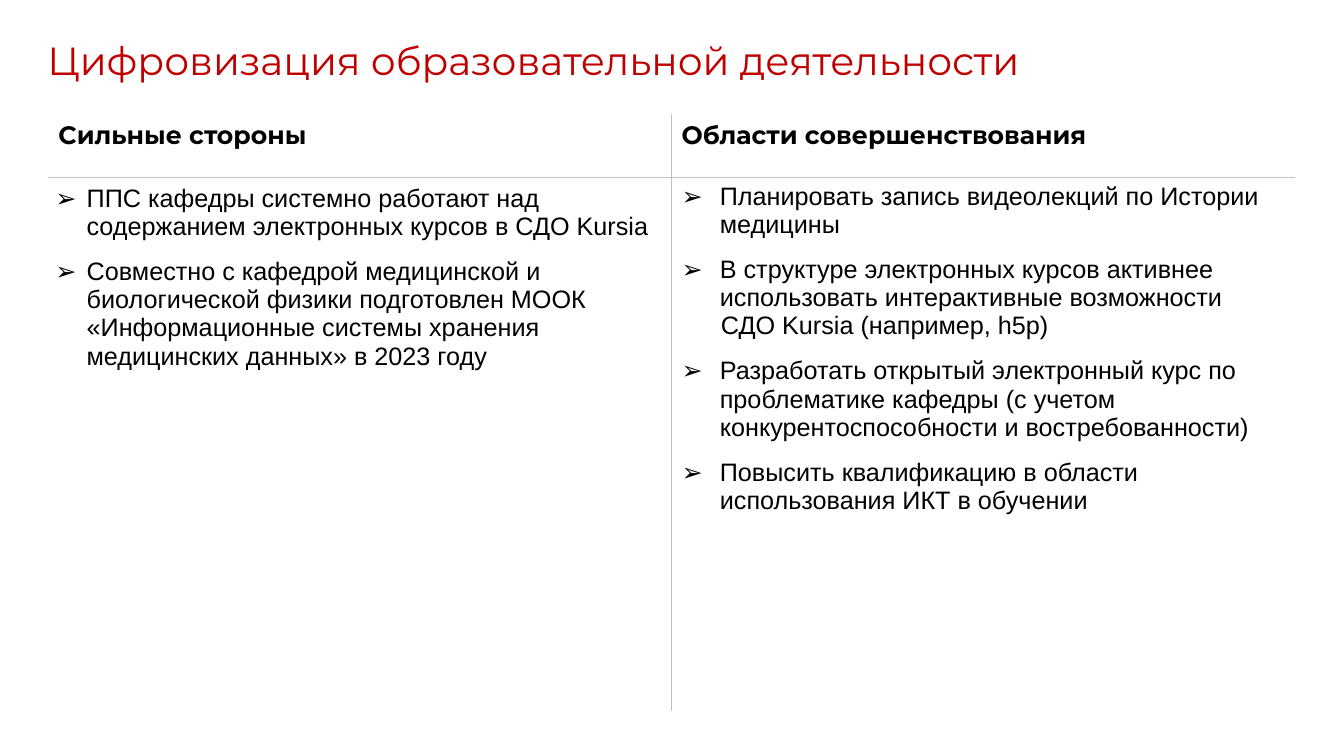
from lxml import etree
from pptx import Presentation
from pptx.dml.color import RGBColor
from pptx.enum.text import MSO_ANCHOR, MSO_AUTO_SIZE, PP_ALIGN
from pptx.oxml.ns import qn
from pptx.util import Inches, Pt

TOP = MSO_ANCHOR.TOP
LEFT = PP_ALIGN.LEFT
GROW = MSO_AUTO_SIZE.SHAPE_TO_FIT_TEXT
TITLE_ONLY = 5
RED, BLACK, WHITE, GREY = "C00000", "000000", "FFFFFF", "BFBFBF"

TITLE = "Цифровизация образовательной деятельности"
HEADINGS = ["Сильные стороны", "Области совершенствования"]
AFTER = {"space_after": Pt(12)}
BOTH = {"space_before": Pt(12), "space_after": Pt(12)}
STRENGTHS = [
    ("ППС кафедры системно работают над содержанием электронных курсов в СДО Kursia", 0.31, -0.31, AFTER),
    ("Совместно с кафедрой медицинской и биологической физики подготовлен МООК "
     "«Информационные системы хранения медицинских данных» в 2023 году", 0.31, -0.31, AFTER),
]
IMPROVEMENTS = [
    ("Планировать запись видеолекций по Истории медицины", 0.38, -0.38, AFTER),
    ("В структуре электронных курсов активнее использовать интерактивные возможности", 0.38, -0.38, {}),
    ("СДО Kursia (например, h5p)", 0, 0.39, {}),
    ("Разработать открытый электронный курс по проблематике кафедры "
     "(с учетом конкурентоспособности и востребованности)", 0.38, -0.38, BOTH),
    ("Повысить квалификацию в области использования ИКТ в обучении", 0.38, -0.38, AFTER),
]


def color(value):
    return RGBColor.from_string(value)


def apply_format(target, values):
    for name, value in values.items():
        setattr(target, name, value)


def write_text(paragraph, text, font_color=BLACK, **font_values):
    run = paragraph.add_run()
    run.text = text
    apply_format(run.font, font_values)
    run.font.color.rgb = color(font_color)


def set_indent(paragraph, margin, indent):
    properties = paragraph._p.get_or_add_pPr()
    properties.set("marL", str(Inches(margin)))
    properties.set("indent", str(Inches(indent)))
    if indent < 0:
        font = etree.SubElement(properties, qn("a:buFont"))
        font.set("typeface", "Wingdings")
        font.set("typeface", "Arial")
        etree.SubElement(properties, qn("a:buChar")).set("char", "➢")


def set_borders(cell, **sides):
    properties = cell._tc.get_or_add_tcPr()
    for side in "LRTB":
        line = etree.SubElement(properties, qn(f"a:ln{side}"), w=str(Pt(1)))
        fill = etree.SubElement(line, qn("a:solidFill"))
        etree.SubElement(fill, qn("a:srgbClr"), val=sides[side])


def add_title(slide, left, top, width, height):
    title = slide.shapes.title
    apply_format(title, {"left": left, "top": top, "width": width, "height": height})
    frame = title.text_frame
    apply_format(frame, {"word_wrap": False, "auto_size": GROW, "vertical_anchor": TOP})
    paragraph = frame.paragraphs[0]
    paragraph.alignment = LEFT
    write_text(paragraph, TITLE, RED, name="Montserrat", size=Pt(28))


def fill_list(cell, items):
    frame = cell.text_frame
    for index, (text, margin, indent, spacing) in enumerate(items):
        paragraph = frame.add_paragraph() if index else frame.paragraphs[0]
        apply_format(paragraph, spacing)
        set_indent(paragraph, margin, indent)
        write_text(paragraph, text, name="Arial", size=Pt(18), bold=False)


def add_comparison(slide, left, top, width, height):
    table = slide.shapes.add_table(2, 2, left, top, width, height).table
    apply_format(table, {"first_row": False, "horz_banding": False})
    table.rows[0].height = Inches(0.62)
    table.rows[1].height = height - Inches(0.62)
    for row in range(2):
        for column in range(2):
            cell = table.cell(row, column)
            set_borders(cell, L=GREY if column else WHITE, R=WHITE if column else GREY,
                        T=GREY if row else WHITE, B=WHITE if row else GREY)
            cell.fill.background()
    for column, heading in enumerate(HEADINGS):
        write_text(table.cell(0, column).text_frame.paragraphs[0], heading,
                   name="Montserrat", size=Pt(18), bold=True)
    inset = Inches(0.07)
    apply_format(table.cell(1, 0), {f"margin_{side}": inset for side in ("left", "top", "right", "bottom")})
    for column, items in enumerate((STRENGTHS, IMPROVEMENTS)):
        fill_list(table.cell(1, column), items)


def main():
    presentation = Presentation()
    apply_format(presentation, {"slide_width": Inches(13.33), "slide_height": Inches(7.5)})
    slide = presentation.slides.add_slide(presentation.slide_layouts[TITLE_ONLY])
    add_title(slide, Inches(0.37), Inches(0.31), Inches(10.75), Inches(0.57))
    add_comparison(slide, Inches(0.48), Inches(1.14), Inches(12.36), Inches(5.92))
    presentation.save("out.pptx")


if __name__ == "__main__":
    main()
